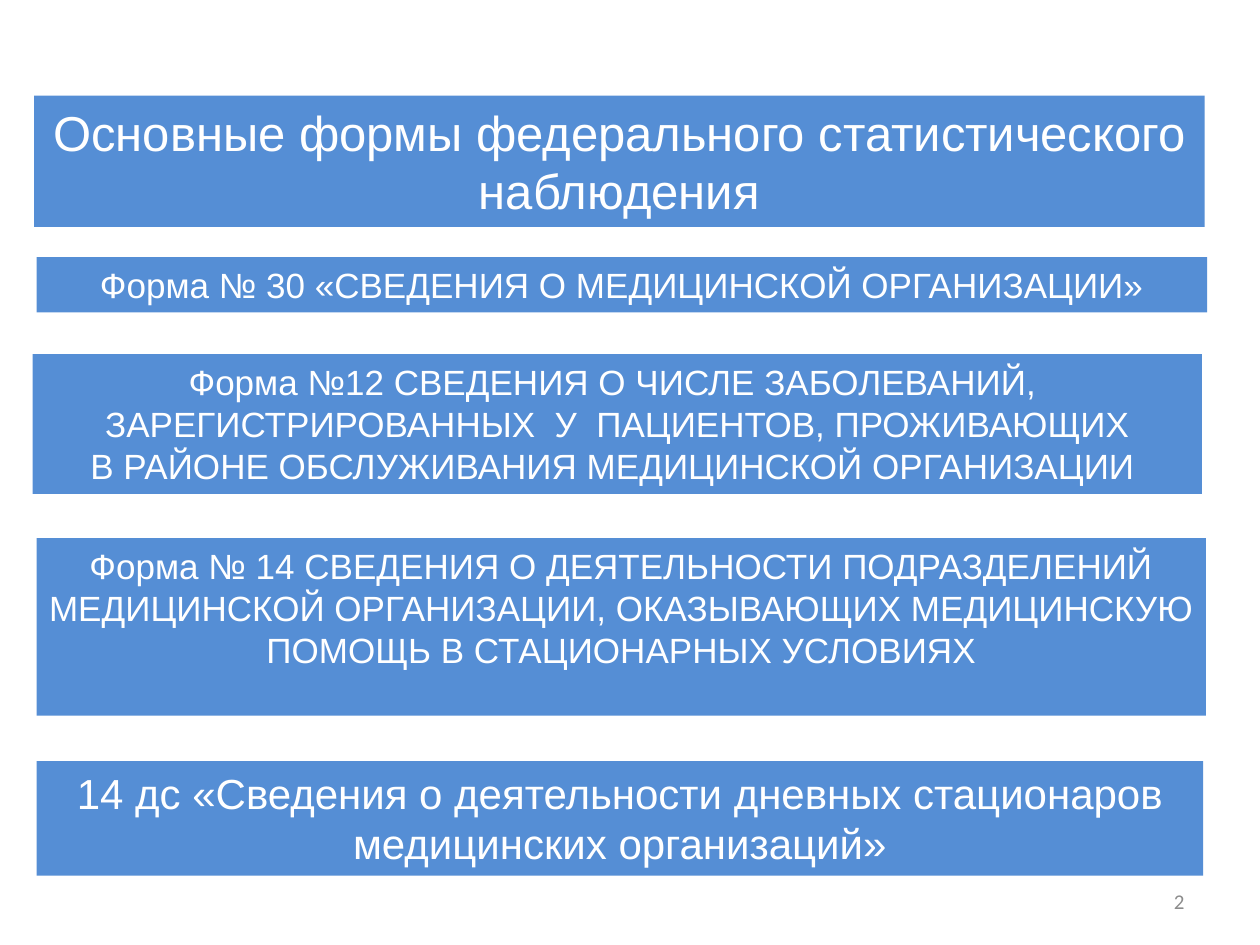
from dataclasses import dataclass

from lxml import etree
from pptx import Presentation
from pptx.dml.color import RGBColor
from pptx.enum import shapes, text
from pptx.oxml.ns import qn
from pptx.util import Inches, Pt


@dataclass(frozen=True)
class Theme:
    font: str = "Arial"
    number_font: str = "Calibri"
    band: RGBColor = RGBColor(0x55, 0x8E, 0xD5)
    ink: RGBColor = RGBColor(0xFF, 0xFF, 0xFF)
    muted: RGBColor = RGBColor(0x8C, 0x8C, 0x8C)
    title: int = 28
    large: int = 24
    body: int = 20
    small: int = 12


class SlideBuilder:
    def __init__(self, s, theme):
        self.s = s
        self.theme = theme

    def style(self, p, size, font, color, align):
        p.alignment = align
        p.font.size = Pt(size)
        p.font.name = font
        p.font.color.rgb = color

    def fill_band(self, sp, lines, size):
        """Give a shape the band colour and centred lines of text."""
        sp.fill.solid()
        sp.fill.fore_color.rgb = self.theme.band
        sp.line.fill.background()
        tf = sp.text_frame
        tf.word_wrap = True
        tf.auto_size = text.MSO_AUTO_SIZE.NONE
        tf.vertical_anchor = text.MSO_ANCHOR.TOP
        tf.text = "\n".join(lines)
        for p in tf.paragraphs:
            self.style(p, size, self.theme.font, self.theme.ink, text.PP_ALIGN.CENTER)

    def title(self, box, line):
        sp = self.s.shapes.title
        sp.left, sp.top, sp.width, sp.height = map(Inches, box)
        self.fill_band(sp, [line], self.theme.title)

    def band(self, box, lines, size):
        sp = self.s.shapes.add_shape(shapes.MSO_SHAPE.RECTANGLE, *map(Inches, box))
        sp.shadow.inherit = False
        self.fill_band(sp, lines, size)

    def slide_number(self, box, number):
        sp = self.s.shapes.add_textbox(*map(Inches, box))
        tf = sp.text_frame
        tf.word_wrap = True
        tf.vertical_anchor = text.MSO_ANCHOR.MIDDLE
        p = tf.paragraphs[0]
        r = p.add_run()
        r.text = str(number)
        self.style(r_owner := p, self.theme.small, self.theme.number_font,
                   self.theme.muted, text.PP_ALIGN.RIGHT)
        # Turn the run into a live slide number field
        r.font.size = Pt(self.theme.small)
        r.font.name = self.theme.number_font
        r.font.color.rgb = self.theme.muted
        fld = etree.SubElement(r_owner._p, qn("a:fld"), type="slidenum",
                               id="{B6F15528-21DE-4FAA-801E-634DDDAF4B2B}")
        fld.extend(list(r._r))
        r_owner._p.replace(r._r, fld)


def main():
    number = 2
    prs = Presentation()
    prs.slide_width, prs.slide_height = Inches(10), Inches(7.5)
    prs.element.set("firstSlideNum", str(number))
    theme = Theme()
    slide = SlideBuilder(prs.slides.add_slide(prs.slide_layouts[5]), theme)

    # Heading
    slide.title((0.27, 0.76, 9.29, 1.04),
                "Основные формы федерального статистического наблюдения")

    # Reporting forms, top to bottom
    forms = [
        ((0.29, 2.04, 9.29, 0.44), theme.body,
         ["Форма № 30 «СВЕДЕНИЯ О МЕДИЦИНСКОЙ ОРГАНИЗАЦИИ»"]),
        ((0.26, 2.81, 9.28, 1.11), theme.body,
         ["Форма №12 СВЕДЕНИЯ О ЧИСЛЕ ЗАБОЛЕВАНИЙ, ",
          "ЗАРЕГИСТРИРОВАННЫХ  У  ПАЦИЕНТОВ, ПРОЖИВАЮЩИХ",
          "В РАЙОНЕ ОБСЛУЖИВАНИЯ МЕДИЦИНСКОЙ ОРГАНИЗАЦИИ "]),
        ((0.29, 4.27, 9.28, 1.41), theme.body,
         ["Форма № 14 СВЕДЕНИЯ О ДЕЯТЕЛЬНОСТИ ПОДРАЗДЕЛЕНИЙ "
          "МЕДИЦИНСКОЙ ОРГАНИЗАЦИИ, ОКАЗЫВАЮЩИХ "
          "МЕДИЦИНСКУЮ ПОМОЩЬ В СТАЦИОНАРНЫХ УСЛОВИЯХ"]),
        ((0.29, 6.04, 9.26, 0.91), theme.large,
         ["14 дс «Сведения о деятельности дневных стационаров "
          "медицинских организаций»"]),
    ]
    for box, size, lines in forms:
        slide.band(box, lines, size)

    # Footer
    slide.slide_number((7.17, 6.95, 2.33, 0.4), number)
    prs.save("out.pptx")


if __name__ == "__main__":
    main()
